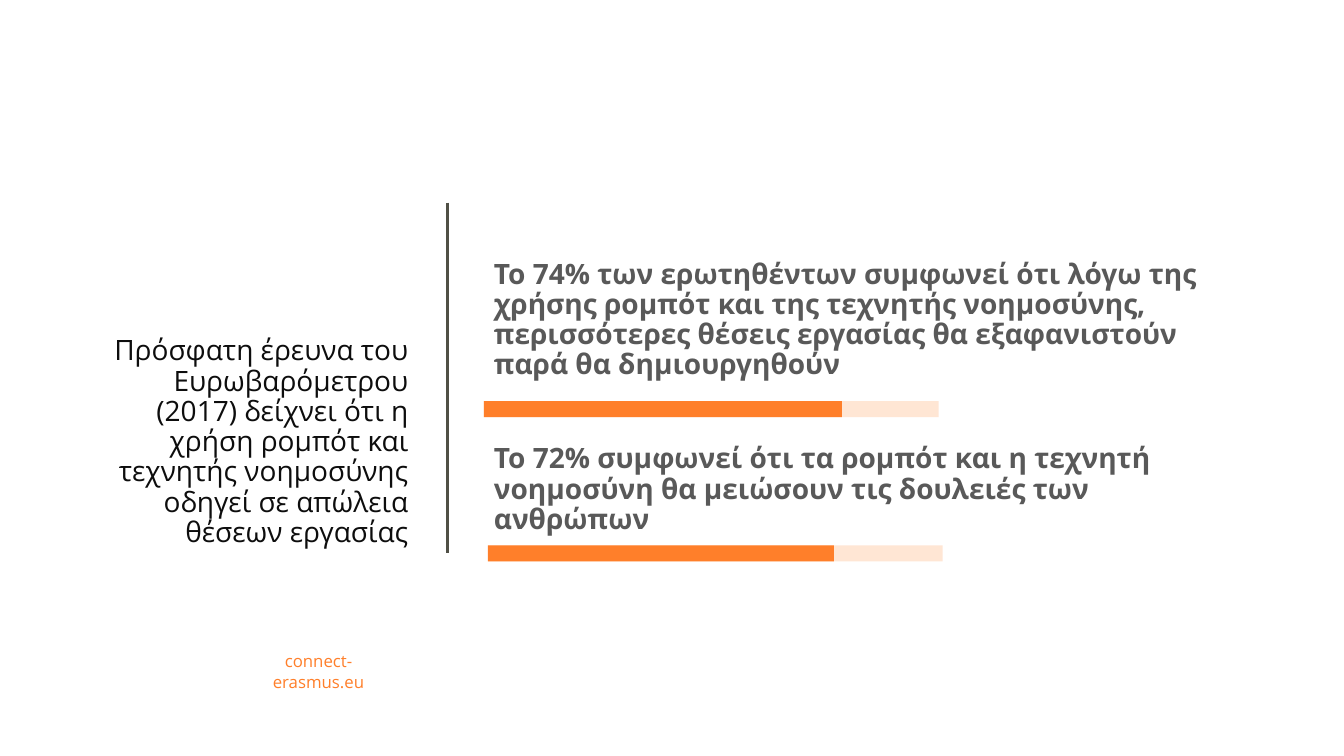
from lxml import etree
from pptx import Presentation
from pptx.dml.color import RGBColor
from pptx.enum.shapes import MSO_CONNECTOR, MSO_SHAPE
from pptx.enum.text import MSO_ANCHOR, PP_ALIGN
from pptx.oxml.ns import qn
from pptx.util import Inches, Pt

ORANGE = RGBColor(0xFF, 0x7F, 0x2A)
PALE_ORANGE = RGBColor(0xFF, 0xE6, 0xD4)
INK = RGBColor(0x0D, 0x0D, 0x0D)
GREY = RGBColor(0x59, 0x59, 0x59)
RULE = RGBColor(0x50, 0x50, 0x46)

STRAIGHT = MSO_CONNECTOR.STRAIGHT
RECTANGLE = MSO_SHAPE.RECTANGLE
TOP, MIDDLE, BOTTOM = MSO_ANCHOR.TOP, MSO_ANCHOR.MIDDLE, MSO_ANCHOR.BOTTOM
LEFT, CENTER, RIGHT = PP_ALIGN.LEFT, PP_ALIGN.CENTER, PP_ALIGN.RIGHT

SURVEY = ("Πρόσφατη έρευνα του Ευρωβαρόμετρου (2017) δείχνει ότι η χρήση ρομπότ "
          "και τεχνητής νοημοσύνης οδηγεί σε απώλεια θέσεων εργασίας")
FINDINGS = [
    "Το 74% των ερωτηθέντων συμφωνεί ότι λόγω της χρήσης ρομπότ και της τεχνητής "
    "νοημοσύνης, περισσότερες θέσεις εργασίας θα εξαφανιστούν παρά θα δημιουργηθούν",
    "Το 72% συμφωνεί ότι τα ρομπότ και η τεχνητή νοημοσύνη θα μειώσουν τις δουλειές "
    "των ανθρώπων",
]
BARS = [(0, 1.45, 3.55), (0.04, 2.88, 3.43)]
BAR_WIDTH, BAR_HEIGHT = 4.51, 0.16


def add_text(slide, box, texts, anchor, layout, font):
    """Write one paragraph per text in the box."""
    frame = slide.shapes.add_textbox(*map(Inches, box)).text_frame
    frame.word_wrap = True
    frame.vertical_anchor = anchor
    for index, text in enumerate(texts):
        paragraph = frame.paragraphs[0] if index == 0 else frame.add_paragraph()
        run = paragraph.add_run()
        run.text = text
        for name, value in layout.items():
            if index or name != "space_before":
                setattr(paragraph, name, value)
        run.font.color.rgb = font["color"]
        for name in ("size", "bold"):
            setattr(run.font, name, font[name])
        run.font.name = "Open Sans"


def add_bar(slide, left, top, width, color):
    """Draw one flat bar."""
    bar = slide.shapes.add_shape(
        RECTANGLE, *map(Inches, (left, top, width, BAR_HEIGHT)))
    bar.shadow.inherit = False
    bar.fill.solid()
    bar.fill.fore_color.rgb = color
    bar.line.fill.background()


def add_survey(slide, box):
    """Place the survey statement and the rule to its right."""
    left, top, width, height = box
    add_text(slide, box, [SURVEY], BOTTOM,
             {"alignment": RIGHT, "line_spacing": 0.9},
             {"size": Pt(20), "bold": False, "color": INK})
    rule_x = left + width + 0.29
    rule = slide.shapes.add_connector(
        STRAIGHT, *map(Inches, (rule_x, top + 1.12, rule_x, top + height)))
    rule.line.color.rgb = RULE
    rule.line.width = Pt(2)
    etree.SubElement(rule._element.spPr, qn("a:effectLst"))


def add_findings(slide, box):
    """Place the findings with a share bar under each."""
    left, top, _, _ = box
    add_text(slide, box, FINDINGS, TOP,
             {"alignment": LEFT, "line_spacing": 0.9, "space_before": Pt(45.5)},
             {"size": Pt(20), "bold": True, "color": GREY})
    for indent, drop, share_width in BARS:
        for width, color in ((BAR_WIDTH, PALE_ORANGE), (share_width, ORANGE)):
            add_bar(slide, left + indent, top + drop, width, color)


def add_footer(slide, box):
    """Place the web address."""
    add_text(slide, box, ["connect-erasmus.eu"], MIDDLE, {"alignment": CENTER},
             {"size": Pt(12), "bold": False, "color": ORANGE})


def main():
    """Build and save the slide."""
    deck = Presentation()
    deck.slide_width, deck.slide_height = Inches(13.33), Inches(7.5)
    slide = deck.slides.add_slide(deck.slide_layouts[6])
    add_footer(slide, (2.28, 6.51, 1.76, 0.3))
    add_survey(slide, (0.77, 0.89, 3.38, 4.6))
    add_findings(slide, (4.8, 2.53, 7.22, 3.2))
    deck.save("out.pptx")


if __name__ == "__main__":
    main()
